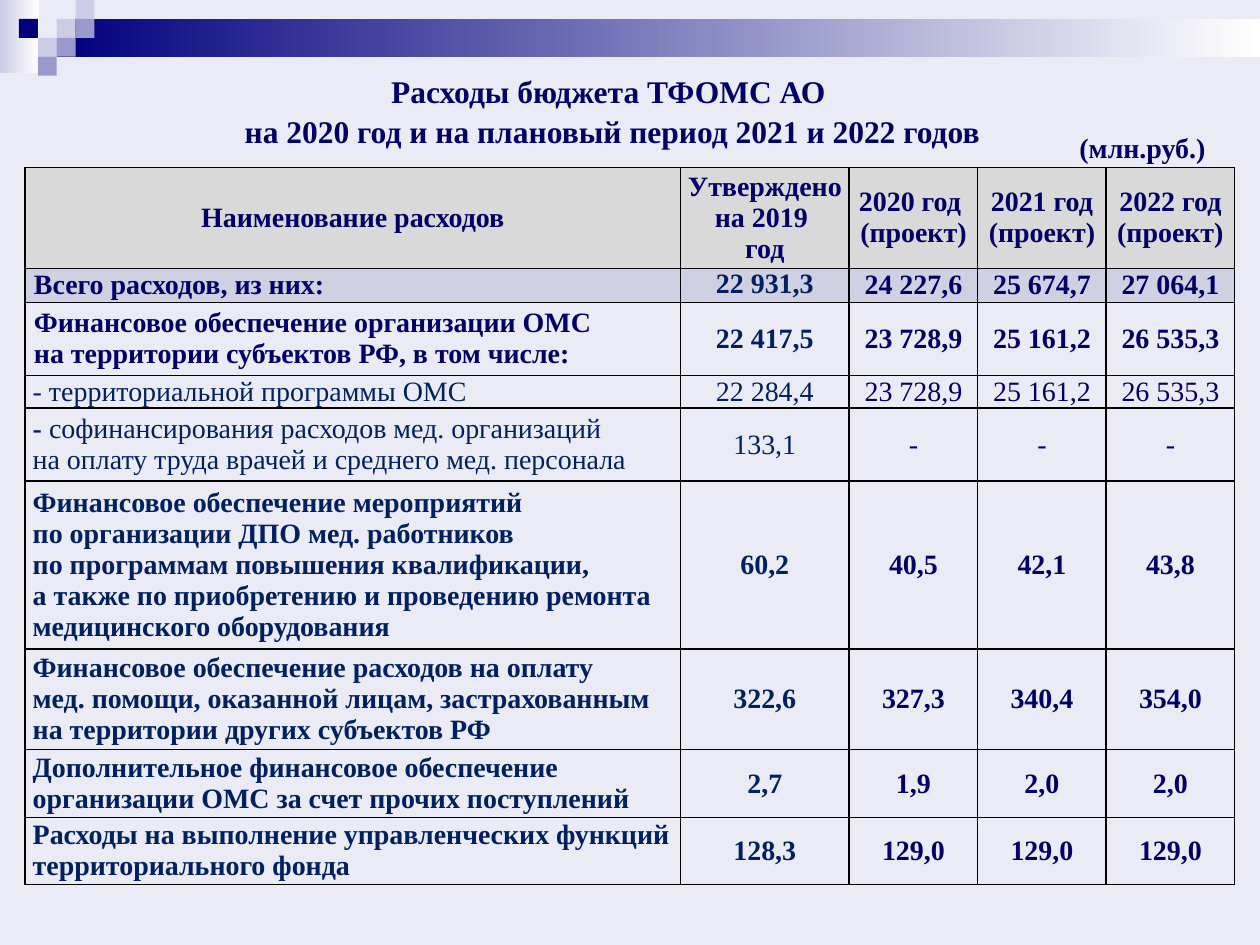
from dataclasses import dataclass

from lxml import etree
from pptx import Presentation
from pptx.dml.color import RGBColor
from pptx.enum.shapes import MSO_SHAPE
from pptx.enum.text import MSO_ANCHOR, PP_ALIGN
from pptx.oxml.ns import qn
from pptx.util import Inches, Pt

RECTANGLE = MSO_SHAPE.RECTANGLE
LEFT, CENTER = PP_ALIGN.LEFT, PP_ALIGN.CENTER
TOP, MIDDLE = MSO_ANCHOR.TOP, MSO_ANCHOR.MIDDLE


@dataclass(frozen=True)
class Theme:
    font: str = "Times New Roman"
    title_size: int = 18
    body_size: int = 16
    border_width: int = 1
    background: str = "EBEBF5"
    text: str = "000066"
    text_alternate: str = "002060"
    navy: str = "00007D"
    lilac: str = "CCCCE6"
    violet: str = "9999CC"
    white: str = "FFFFFF"
    header_fill: str = "D9D9D9"
    total_fill: str = "D0D0E3"
    border: str = "000000"


THEME = Theme()

TITLE = "Расходы бюджета ТФОМС АО \vна 2020 год и на плановый период 2021 и 2022 годов"
COLUMN_WIDTHS = (5.2, 1.34, 1.02, 1.02, 1.02)
ROW_HEIGHTS = (0.8, 0.27, 0.58, 0.26, 0.58, 1.33, 0.8, 0.54, 0.53)
HEADERS = (
    "Наименование расходов",
    "Утверждено на 2019 \nгод",
    "2020 год \n(проект)",
    "2021 год (проект)",
    "2022 год (проект)",
)
EXPENSES = (
    ("Всего расходов, из них:", "22 931,3", "24 227,6", "25 674,7", "27 064,1"),
    ("Финансовое обеспечение организации ОМС \vна территории субъектов РФ, в том числе:",
     "22 417,5", "23 728,9", "25 161,2", "26 535,3"),
    ("- территориальной программы ОМС", "22 284,4", "23 728,9", "25 161,2", "26 535,3"),
    ("софинансирования расходов мед. организаций \vна оплату труда врачей и среднего мед. персонала",
     "133,1", "-", "-", "-"),
    ("Финансовое обеспечение мероприятий \vпо организации ДПО мед. работников \v"
     "по программам повышения квалификации, \v"
     "а также по приобретению и проведению ремонта медицинского оборудования",
     "60,2", "40,5", "42,1", "43,8"),
    ("Финансовое обеспечение расходов на оплату \v"
     "мед. помощи, оказанной лицам, застрахованным на территории других субъектов РФ",
     "322,6", "327,3", "340,4", "354,0"),
    ("Дополнительное финансовое обеспечение организации ОМС за счет прочих поступлений",
     "2,7", "1,9", "2,0", "2,0"),
    ("Расходы на выполнение управленческих функций территориального фонда",
     "128,3", "129,0", "129,0", "129,0"),
)
TOTAL_ROW = 1
SUBITEM_ROWS = (3, 4)
BOLD_DASH_ROW = 4


def color(value):
    return RGBColor.from_string(value)


def write_text(frame, text, size=THEME.body_size, text_color=THEME.text, bold=True,
               align=CENTER, line_spacing=None, bold_prefix=""):
    """Split text into paragraphs at \\n and into lines at \\v."""
    frame.word_wrap = True

    def add_run(paragraph, words, run_bold):
        run = paragraph.add_run()
        run.text = words
        font = run.font
        font.name, font.size, font.bold = THEME.font, Pt(size), run_bold
        font.color.rgb = color(text_color)

    for index, block in enumerate(text.split("\n")):
        paragraph = frame.add_paragraph() if index else frame.paragraphs[0]
        paragraph.alignment = align
        paragraph.line_spacing = line_spacing
        if bold_prefix and index == 0:
            add_run(paragraph, bold_prefix, True)
        for number, line in enumerate(block.split("\v")):
            if number:
                paragraph.add_line_break()
            add_run(paragraph, line, bold)


def add_rectangle(slide, left, top, width, height, *colors):
    """One colour gives a solid fill, two give a left-to-right gradient."""
    shape = slide.shapes.add_shape(
        RECTANGLE, Inches(left), Inches(top), Inches(width), Inches(height))
    shape.shadow.inherit = False
    shape.line.fill.background()
    if len(colors) == 1:
        shape.fill.solid()
        shape.fill.fore_color.rgb = color(colors[0])
    else:
        shape.fill.gradient()
        shape.fill.gradient_angle = 0
        for stop, value in zip(shape.fill.gradient_stops, colors):
            stop.color.rgb = color(value)


def add_banner(slide, left, top, width):
    unit = 0.15
    add_rectangle(slide, left, top, 0.31, 0.58, THEME.lilac, THEME.white)
    add_rectangle(slide, left + 3 * unit, top + unit, width - 3 * unit, 2 * unit,
                  THEME.navy, THEME.white)
    squares = (
        (3, 1, THEME.lilac), (4, 0, THEME.lilac), (4, 1, THEME.violet),
        (2, 2, THEME.lilac), (1, 1, THEME.navy), (3, 2, THEME.violet),
        (2, 3, THEME.violet),
    )
    for column, row, fill in squares:
        add_rectangle(slide, left + column * unit, top + row * unit, unit, unit, fill)


def place_title(slide, left, top, width, height):
    title = slide.shapes.title
    title.left, title.top = Inches(left), Inches(top)
    title.width, title.height = Inches(width), Inches(height)
    title.text_frame.vertical_anchor = MIDDLE
    write_text(title.text_frame, TITLE, size=THEME.title_size, line_spacing=1.05)


def add_unit_label(slide, left, top, width, height):
    box = slide.shapes.add_textbox(
        Inches(left), Inches(top), Inches(width), Inches(height))
    write_text(box.text_frame, "(млн.руб.) ")


def set_borders(cell):
    properties = cell._tc.get_or_add_tcPr()
    for index, side in enumerate(("a:lnL", "a:lnR", "a:lnT", "a:lnB")):
        line = etree.Element(qn(side), w=str(Pt(THEME.border_width)))
        fill = etree.SubElement(line, qn("a:solidFill"))
        etree.SubElement(fill, qn("a:srgbClr"), val=THEME.border)
        properties.insert(index, line)


def format_cell(cell, row, column):
    inset = 0.06 if column == 1 or (column == 0 and row > 2) else 0.07
    if row == 0 and column == 1:
        inset = 0.04
    cell.margin_left = cell.margin_right = Inches(inset)
    cell.margin_top = cell.margin_bottom = 0
    cell.vertical_anchor = TOP if (row, column) == (TOTAL_ROW, 1) else MIDDLE
    fills = {0: THEME.header_fill, TOTAL_ROW: THEME.total_fill}
    if row in fills:
        cell.fill.solid()
        cell.fill.fore_color.rgb = color(fills[row])
    else:
        cell.fill.background()
    set_borders(cell)


def add_expense_table(slide, left, top):
    rows = (HEADERS,) + EXPENSES
    table = slide.shapes.add_table(
        len(rows), len(HEADERS), Inches(left), Inches(top),
        Inches(sum(COLUMN_WIDTHS)), Inches(sum(ROW_HEIGHTS))).table
    table.horz_banding = False
    for column, width in zip(table.columns, COLUMN_WIDTHS):
        column.width = Inches(width)
    for table_row, height in zip(table.rows, ROW_HEIGHTS):
        table_row.height = Inches(height)
    for row, texts in enumerate(rows):
        for column, text in enumerate(texts):
            cell = table.cell(row, column)
            format_cell(cell, row, column)
            alternate = (column == 0 and row > 2) or (column == 1 and row > 0)
            write_text(
                cell.text_frame, text,
                text_color=THEME.text_alternate if alternate else THEME.text,
                bold=row not in SUBITEM_ROWS,
                align=LEFT if column == 0 and row > 0 else CENTER,
                bold_prefix="- " if (row, column) == (BOLD_DASH_ROW, 0) else "")


def main():
    presentation = Presentation()
    presentation.slide_width, presentation.slide_height = Inches(10), Inches(7.5)
    slide = presentation.slides.add_slide(presentation.slide_layouts[5])
    slide.background.fill.solid()
    slide.background.fill.fore_color.rgb = color(THEME.background)
    add_banner(slide, 0, 0, 10)
    place_title(slide, 0, 0.52, 9.72, 0.71)
    add_expense_table(slide, 0.2, 1.33)
    add_unit_label(slide, 8.19, 0.99, 1.81, 0.37)
    presentation.save("out.pptx")


if __name__ == "__main__":
    main()
